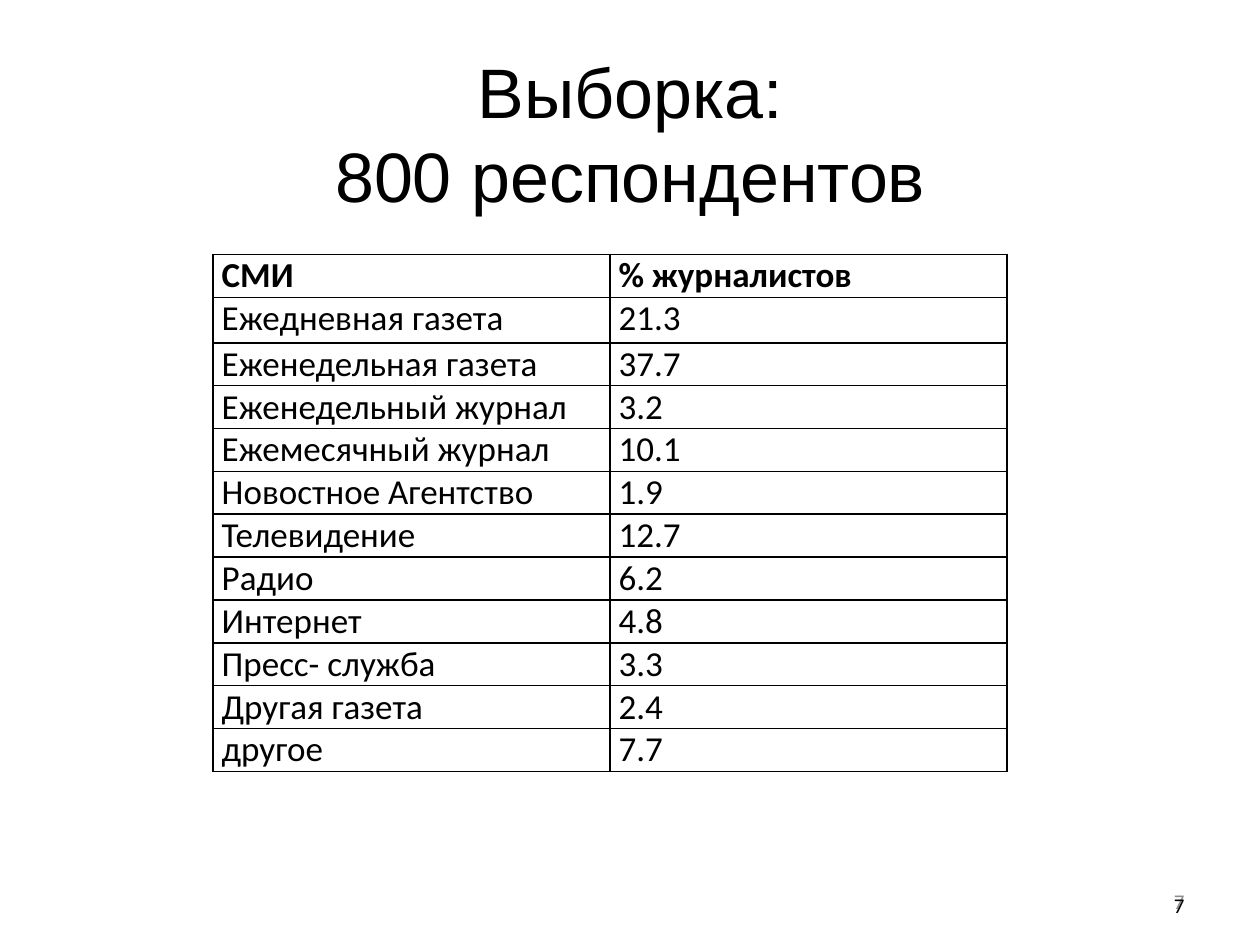
from lxml.etree import SubElement
from pptx import Presentation
from pptx.dml.color import RGBColor
from pptx.enum.text import MSO_ANCHOR as ANCHOR, PP_ALIGN as ALIGN
from pptx.oxml.ns import qn
from pptx.util import Pt

BLACK = RGBColor(0x00, 0x00, 0x00)
GRAY = RGBColor(0x8C, 0x8C, 0x8C)
WHITE = RGBColor(0xFF, 0xFF, 0xFF)

ROWS = [
    ("СМИ", "% журналистов"),
    ("Ежедневная газета", "21.3"),
    ("Еженедельная газета", "37.7"),
    ("Еженедельный журнал", "3.2"),
    ("Ежемесячный журнал", "10.1"),
    ("Новостное Агентство", "1.9"),
    ("Телевидение", "12.7"),
    ("Радио", "6.2"),
    ("Интернет", "4.8"),
    ("Пресс- служба", "3.3"),
    ("Другая газета", "2.4"),
    ("другое", "7.7"),
]


def set_text(tf, text, size=20, font="Calibri", color=BLACK, bold=False,
             align=ALIGN.JUSTIFY):
    tf.word_wrap = True
    p = tf.paragraphs[0]
    p.text = text
    p.alignment = align
    for r in p.runs:
        r.font.size = Pt(size)
        r.font.name = font
        r.font.color.rgb = color
        r.font.bold = bold
    return p


def add_borders(cell, color=BLACK, width=Pt(1)):
    tcPr = cell._tc.get_or_add_tcPr()
    for i, side in enumerate(("lnL", "lnR", "lnT", "lnB")):
        ln = tcPr.makeelement(qn(f"a:{side}"), {"w": str(int(width))})
        tcPr.insert(i, ln)
        fill = SubElement(ln, qn("a:solidFill"))
        SubElement(fill, qn("a:srgbClr"), val=str(color))


prs = Presentation()
prs.slide_width, prs.slide_height = Pt(720), Pt(540)
s = prs.slides.add_slide(prs.slide_layouts[5])

# Title
title = s.shapes.title
title.left, title.top, title.width, title.height = Pt(36), Pt(21.6), Pt(648), Pt(90)
tf = title.text_frame
tf.vertical_anchor = ANCHOR.TOP
tf.margin_top = Pt(6)
p = set_text(tf, "Выборка:\v800 респондентов", size=40, font="Arial",
             align=ALIGN.CENTER)
p.line_spacing = Pt(48)

# Slide number, gray with black over it
for top, height, anchor, color in ((500.4, 28.8, ANCHOR.MIDDLE, GRAY),
                                   (491.8, 36, ANCHOR.BOTTOM, BLACK)):
    box = s.shapes.add_textbox(Pt(516), Pt(top), Pt(168), Pt(height))
    box.text_frame.vertical_anchor = anchor
    set_text(box.text_frame, "7", size=12, color=color, align=ALIGN.RIGHT)

# Table of respondents by type of media
frame = s.shapes.add_table(len(ROWS), 2, Pt(121.7), Pt(145.4), Pt(453.6), Pt(295.5))
table = frame.table
table.horz_banding = False
for col in table.columns:
    col.width = Pt(226.8)
for i, values in enumerate(ROWS):
    table.rows[i].height = Pt(26 if i == 1 else 24.5)
    for cell, value in zip(table.rows[i].cells, values):
        cell.margin_left = cell.margin_right = Pt(5)
        cell.margin_top = cell.margin_bottom = Pt(0)
        cell.fill.solid()
        cell.fill.fore_color.rgb = WHITE
        add_borders(cell)
        set_text(cell.text_frame, value, bold=i == 0)

prs.save("out.pptx")
